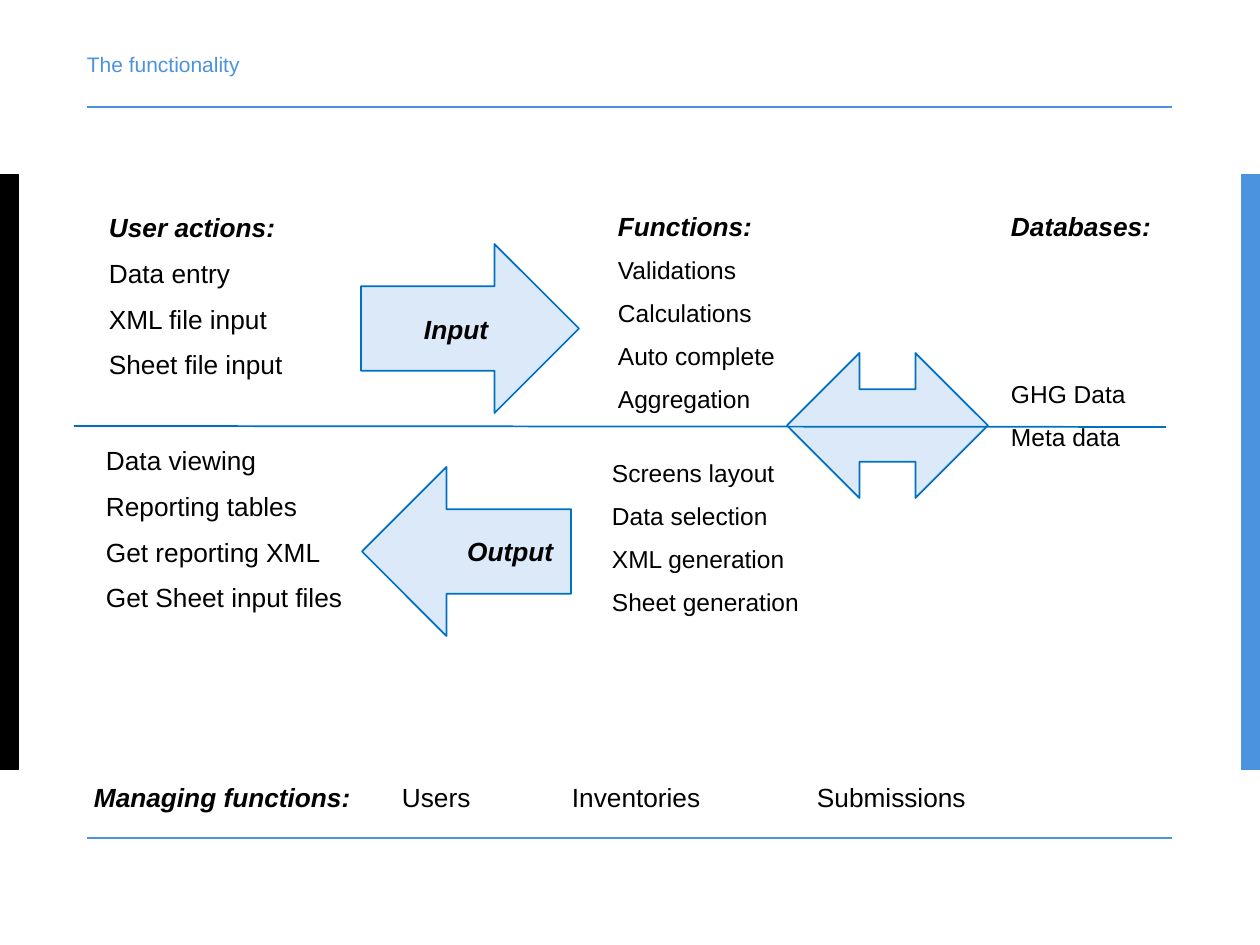
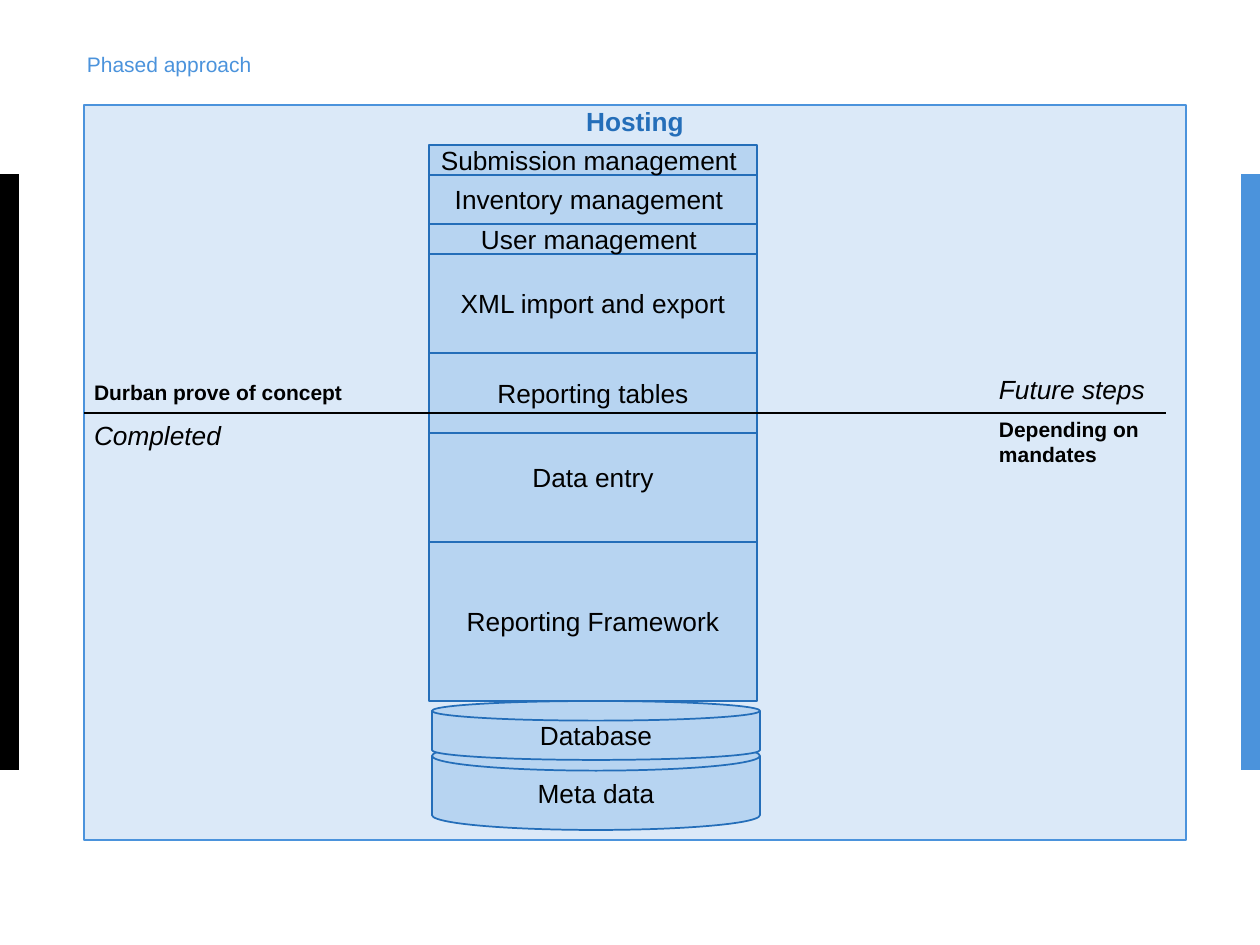
from itertools import accumulate
from pptx import Presentation
from pptx.dml.color import RGBColor
from pptx.enum.shapes import MSO_CONNECTOR as Link, MSO_SHAPE as Kind
from pptx.enum.text import MSO_ANCHOR as Anchor, PP_ALIGN as Align
from pptx.oxml.ns import qn
from pptx.util import Inches, Pt

SCALE = Inches(1) / 126  # EMU in one px
BLACK, BLUE, EDGE = "000000", "4B93DC", "0070C0"
PALE, MID, DEEP = "DBE9F8", "B7D4F1", "246EB9"


def px(num):
    return round(num * SCALE)


def rgb(code):
    return RGBColor.from_string(code)


def write(shape, *lines, size=15, color=BLACK, bold=False, slant=False,
          align=Align.LEFT, anchor=Anchor.TOP, left=0, right=0):
    """Fill a shape with lines; a line is a string or (string, own format)."""
    frame = shape.text_frame
    frame.word_wrap = True
    frame.vertical_anchor = anchor
    frame.margin_left, frame.margin_right = px(left), px(right)
    frame.margin_top = frame.margin_bottom = 0
    for i, line in enumerate(lines):
        text, own = (line, {}) if isinstance(line, str) else line
        para = frame.add_paragraph() if i else frame.paragraphs[0]
        para.alignment = align
        points = own.get("size", size)
        if i:
            para.space_before = Pt(round(points * 0.55, 2))
        run = para.add_run()
        run.text = text
        font = run.font
        font.name, font.size = "Arial", Pt(points)
        font.bold = own.get("bold", bold)
        font.italic = own.get("slant", slant)
        font.color.rgb = rgb(color)


class Deck:
    """Holds the shared look and the current slide."""

    def __init__(self):
        self.file = Presentation()
        self.file.slide_width, self.file.slide_height = px(1260), px(945)

    def page(self, title):
        self.shapes = self.file.slides.add_slide(self.file.slide_layouts[6]).shapes
        for x, color in ((0, BLACK), (1241, BLUE)):
            self.shape(Kind.RECTANGLE, x, 174, 19, 596, color)
        for y in (107, 838):
            self.line(87, y, 1172, y, BLUE)
        self.text(87, 43, 1085, title, high=43, size=12, color=BLUE,
                  anchor=Anchor.MIDDLE)

    def shape(self, kind, x, y, wide, high, fill, edge=None):
        item = self.shapes.add_shape(kind, px(x), px(y), px(wide), px(high))
        item.shadow.inherit = False
        item.fill.solid()
        item.fill.fore_color.rgb = rgb(fill)
        if edge:
            item.line.color.rgb = rgb(edge)
            item.line.width = Pt(1)
        else:
            item.line.fill.background()
        return item

    def line(self, x, y, to_x, to_y, color):
        item = self.shapes.add_connector(Link.STRAIGHT, px(x), px(y), px(to_x), px(to_y))
        item.line.color.rgb = rgb(color)
        item.line.width = Pt(1)
        props = item._element.spPr
        props.append(props.makeelement(qn("a:effectLst"), {}))

    def text(self, x, y, wide, *lines, high=30, **form):
        box = self.shapes.add_textbox(px(x), px(y), px(wide), px(high))
        write(box, *lines, **form)


def functions(deck):
    deck.page("The functionality")
    head = {"size": 15, "bold": True, "slant": True}
    arrows = ((Kind.RIGHT_ARROW, 361, 244, 218, "Input"),
              (Kind.LEFT_ARROW, 362, 467, 209, "Output"))
    for kind, x, y, wide, name in arrows:
        arrow = deck.shape(kind, x, y, wide, 169, PALE, EDGE)
        write(arrow, name, anchor=Anchor.MIDDLE, left=63, **head)

    deck.text(109, 211, 240, ("User actions:", head), "Data entry",
              "XML file input", "Sheet file input", high=165)
    deck.text(106, 444, 250, "Data viewing", "Reporting tables",
              "Get reporting XML", "Get Sheet input files", high=165)
    deck.text(618, 210, 190, ("Functions:", head), "Validations", "Calculations",
              "Auto complete", "Aggregation", high=200, size=14)
    deck.text(612, 458, 200, "Screens layout", "Data selection",
              "XML generation", "Sheet generation", high=155, size=14)
    deck.text(1011, 210, 160, "Databases:", **head)
    deck.text(1011, 379, 160, "GHG Data", "Meta data", high=72, size=14)

    deck.shape(Kind.LEFT_RIGHT_ARROW, 787, 353, 201, 145, PALE, EDGE)
    deck.line(1166, 427, 74, 426, EDGE)

    deck.text(94, 781, 290, "Managing functions:", **head)
    for x, name in ((402, "Users"), (572, "Inventories"), (817, "Submissions")):
        deck.text(x, 781, 200, name)


def phases(deck):
    deck.page("Phased approach")
    host = deck.shape(Kind.RECTANGLE, 84, 105, 1102, 735, PALE, BLUE)
    write(host, "Hosting", color=DEEP, bold=True, align=Align.CENTER)

    mid = {"align": Align.CENTER, "anchor": Anchor.MIDDLE}
    for name, y, high in (("Meta data", 741, 89), ("Database", 701, 59)):
        disk = deck.shape(Kind.FLOWCHART_MAGNETIC_DISK, 432, y, 328, high, MID, DEEP)
        write(disk, name, **mid)

    # name, step to the next layer, overlap onto it, right inset
    stack = (("Submission management", 30, 0, 8),
             ("Inventory management", 49, 0, 8),
             ("User management", 30, 0, 8),
             ("XML import and export", 99, 0, 0),
             ("Reporting tables", 60, 20, 0),
             ("Data entry", 129, 0, 0),
             ("Reporting Framework", 159, 0, 0))
    tops = accumulate((step for _, step, _, _ in stack), initial=145)
    for (name, step, over, right), y in reversed(list(zip(stack, tops))):
        layer = deck.shape(Kind.RECTANGLE, 429, y, 328, step + over, MID, DEEP)
        write(layer, name, right=right, **mid)

    deck.line(84, 413, 1166, 413, BLACK)
    strong, soft = {"size": 12, "bold": True}, {"slant": True}
    deck.text(94, 380, 270, ("Durban prove of concept", strong),
              ("Completed", soft), high=70)
    deck.text(999, 373, 174, ("Future steps", soft),
              ("Depending on mandates", strong), high=95)


def main():
    deck = Deck()
    functions(deck)
    phases(deck)
    deck.file.save("out.pptx")


if __name__ == "__main__":
    main()
